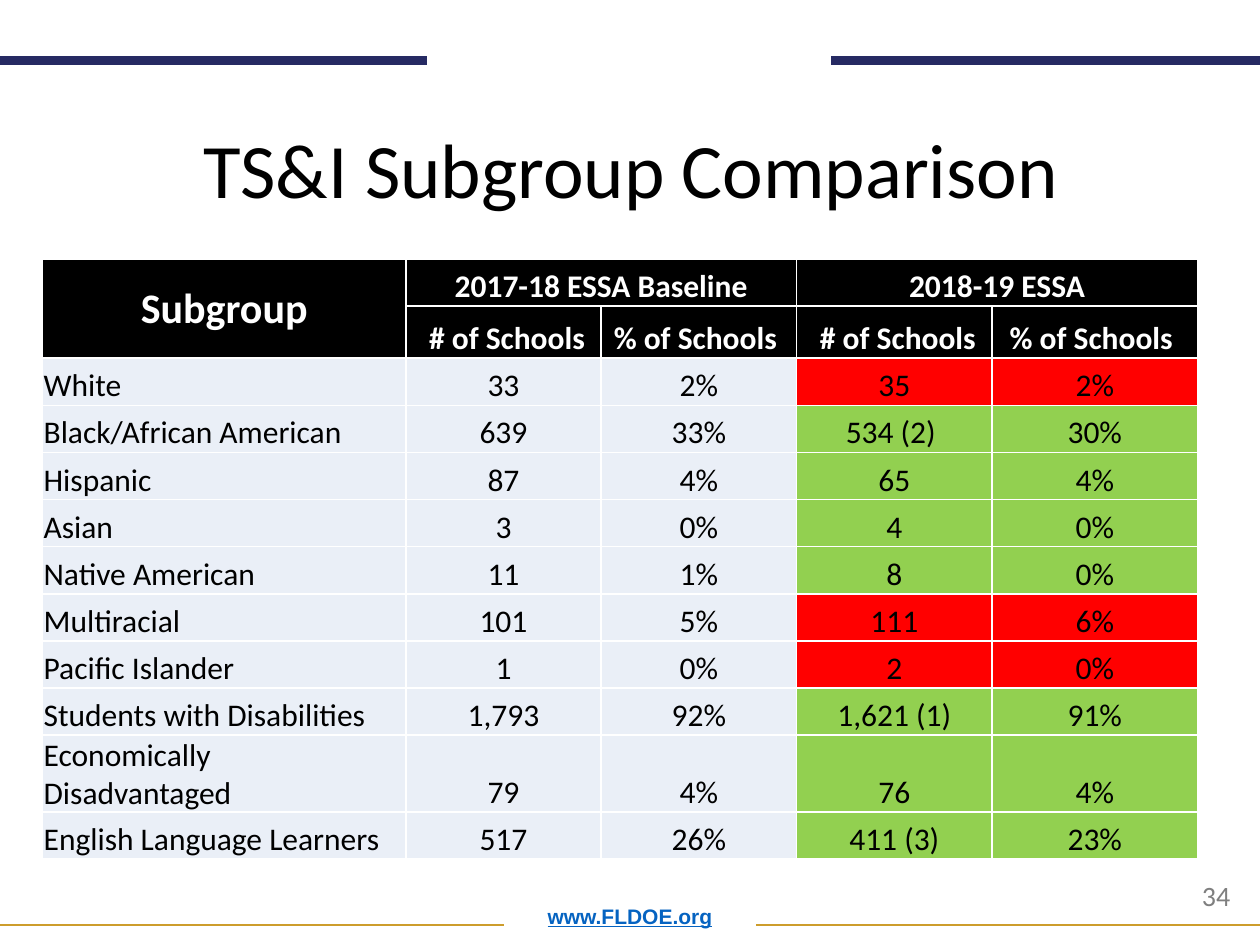
from lxml.etree import SubElement
from pptx import Presentation
from pptx.dml.color import RGBColor
from pptx.enum.shapes import MSO_CONNECTOR
from pptx.enum.text import MSO_ANCHOR, PP_ALIGN
from pptx.oxml import parse_xml
from pptx.oxml.ns import nsdecls, qn
from pptx.util import Cm, Pt

TITLE = "TS&I Subgroup Comparison"
YEARS = ["2017-18 ESSA Baseline", "2018-19 ESSA"]
HEADS = [" # of Schools", "% of Schools "]
RED, GREEN, PALE, BLACK, WHITE = "FF0000", "92D050", "EAEFF7", "000000", "FFFFFF"
GROUPS = [
    ("White", "33", "2%", "35", "2%", RED),
    ("Black/African American", "639", "33%", "534 (2) ", "30%", GREEN),
    ("Hispanic", "87", "4%", "65", "4%", GREEN),
    ("Asian", "3", "0%", "4", "0%", GREEN),
    ("Native American", "11", "1%", "8", "0%", GREEN),
    ("Multiracial", "101", "5%", "111", "6%", RED),
    ("Pacific Islander", "1", "0%", "2", "0%", RED),
    ("Students with Disabilities", "1,793", "92%", "1,621 (1)", "91%", GREEN),
    ("Economically Disadvantaged", "79", "4%", "76", "4%", GREEN),
    ("English Language Learners", "517", "26%", "411 (3)", "23%", GREEN),
]
WIDTHS = [7.32, 3.94, 3.94, 3.94, 4.14]
ROW = 0.95
TALL = {1: 1.05, 10: 1.55}
RULES = [
    (0, 8.61, 1.22, "262A63", 5),
    (16.76, 25.4, 1.22, "262A63", 5),
    (0, 10.16, 18.64, "CD9D2C", 1),
    (15.24, 25.4, 18.64, "CD9D2C", 1),
]
NOTES = [
    ("www.FLDOE.org", (1.75, 17.78, 21.9, 1.07), MSO_ANCHOR.BOTTOM, PP_ALIGN.CENTER,
     "0563C1", {"name": "Arial", "size": Pt(12), "bold": True, "underline": True}),
    ("34", (23.98, 17.58, 1.32, 0.94), MSO_ANCHOR.TOP, PP_ALIGN.LEFT,
     "7F7F7F", {"name": "Calibri", "size": Pt(16)}),
]


def paint(color, tone):
    color.rgb = RGBColor.from_string(tone)


def style(item, values):
    for key, value in values.items():
        setattr(item, key, value)


def write(frame, text, align, tone, font):
    frame.text = text
    para = frame.paragraphs[0]
    para.alignment = align
    run = para.runs[0]
    style(run.font, font)
    paint(run.font.color, tone)
    return para


def place(shape, box):
    names = ("left", "top", "width", "height")
    style(shape, dict(zip(names, map(Cm, box))))


def rule(slide, start, end, top, tone, size):
    line = slide.shapes.add_connector(
        MSO_CONNECTOR.STRAIGHT, Cm(start), Cm(top), Cm(end), Cm(top))
    line.line.width = Pt(size)
    paint(line.line.color, tone)
    SubElement(line._element.spPr, qn("a:effectLst"))


def edge(cell):
    props = cell._tc.get_or_add_tcPr()
    for spot, side in enumerate(("lnL", "lnR", "lnT", "lnB")):
        props.insert(spot, parse_xml(
            f'<a:{side} {nsdecls("a")} w="12700"><a:solidFill>'
            f'<a:srgbClr val="{WHITE}"/></a:solidFill></a:{side}>'))


def fill(cell, text, row, col, back):
    head = row < 2
    corner = head and col == 0
    style(cell, {
        "margin_left": Cm(0.02), "margin_right": Cm(0.02),
        "margin_top": Cm(0.02), "margin_bottom": 0,
        "vertical_anchor": MSO_ANCHOR.MIDDLE if corner else MSO_ANCHOR.BOTTOM,
    })
    cell.fill.solid()
    paint(cell.fill.fore_color, back)
    edge(cell)
    if text:
        align = PP_ALIGN.CENTER if head or col else PP_ALIGN.LEFT
        font = {"name": "Calibri", "size": Pt(24 if corner else 18), "bold": head}
        write(cell.text_frame, text, align, WHITE if head else BLACK, font)


def grid(slide):
    rows = [(["Subgroup", YEARS[0], "", YEARS[1], ""], [BLACK] * 5),
            ([""] + HEADS * 2, [BLACK] * 5)]
    rows += [(texts, [PALE] * 3 + [tone] * 2) for *texts, tone in GROUPS]
    highs = [TALL.get(row, ROW) for row in range(len(rows))]
    table = slide.shapes.add_table(
        len(rows), len(WIDTHS), Cm(0.86), Cm(5.22),
        Cm(sum(WIDTHS)), Cm(sum(highs))).table
    style(table, {"first_row": False, "horz_banding": False})
    for col, width in zip(table.columns, WIDTHS):
        col.width = Cm(width)
    for row, high in zip(table.rows, highs):
        row.height = Cm(high)
    for row, (texts, tones) in enumerate(rows):
        for col, (text, tone) in enumerate(zip(texts, tones)):
            fill(table.cell(row, col), text, row, col, tone)
    for first, last in (((0, 0), (1, 0)), ((0, 1), (0, 2)), ((0, 3), (0, 4))):
        table.cell(*first).merge(table.cell(*last))


def main():
    deck = Presentation()
    style(deck, {"slide_width": Cm(25.4), "slide_height": Cm(19.05)})
    slide = deck.slides.add_slide(deck.slide_layouts[5])
    for spec in RULES:
        rule(slide, *spec)
    for text, box, anchor, align, tone, font in NOTES:
        note = slide.shapes.add_textbox(*map(Cm, box))
        style(note.text_frame, {"word_wrap": True, "vertical_anchor": anchor})
        para = write(note.text_frame, text, align, tone, font)
        if anchor == MSO_ANCHOR.BOTTOM:
            para.line_spacing = 0.9
    grid(slide)
    title = slide.shapes.title
    place(title, (3.76, 2.31, 17.93, 2.13))
    style(title.text_frame, {"word_wrap": False, "vertical_anchor": MSO_ANCHOR.MIDDLE})
    write(title.text_frame, TITLE, PP_ALIGN.CENTER, BLACK,
          {"name": "Calibri", "size": Pt(44)})
    deck.save("out.pptx")


if __name__ == "__main__":
    main()
